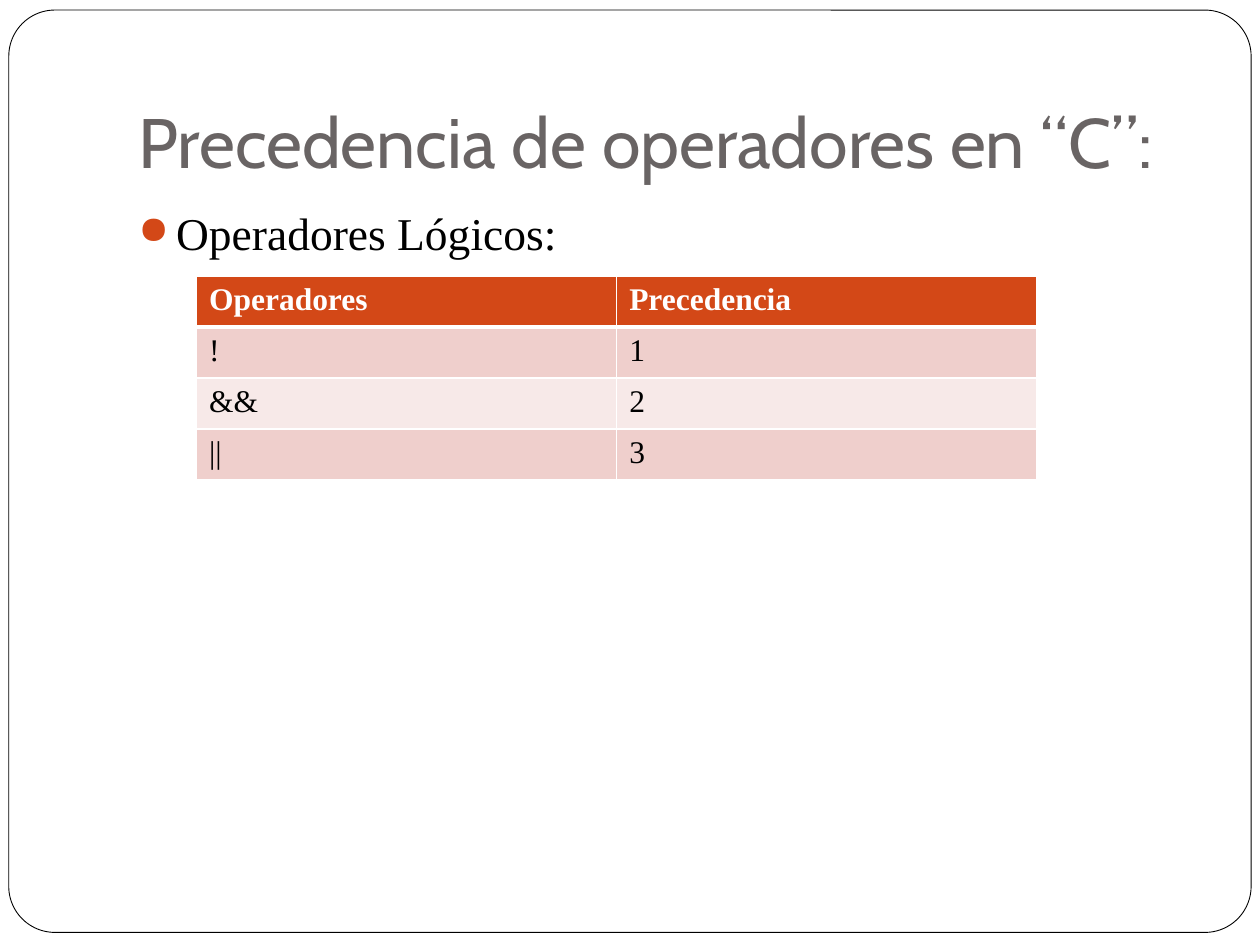
import pptx
import pptx.util
import pptx.dml.color
import pptx.enum.shapes
import pptx.enum.text
import pptx.oxml
import pptx.oxml.ns

Inches = pptx.util.Inches
Pt = pptx.util.Pt

TITLE = "Precedencia de operadores en “C”:"
POINT = "Operadores Lógicos:"
ROWS = [
    ("Operadores", "Precedencia"),
    ("!", "1"),
    ("&&", "2"),
    ("||", "3"),
]
FILLS = ["D34817", "EFCFCC", "F7E9E8", "EFCFCC"]
SERIF = "Times New Roman"
HEAD = {"name": "Cabin", "size": Pt(40), "color": "696464"}
BODY = {"name": SERIF, "size": Pt(26), "color": "000000"}
TOP = {"name": SERIF, "size": Pt(18), "bold": True, "color": "FFFFFF"}
CELL = {"name": SERIF, "size": Pt(18), "bold": False, "color": "000000"}


def paint(part, color):
    part.rgb = pptx.dml.color.RGBColor.from_string(color)


def fill(part, color):
    part.fill.solid()
    paint(part.fill.fore_color, color)


def write(para, text, style):
    run = para.add_run()
    run.text = text
    for key, value in style.items():
        if key == "color":
            paint(run.font.color, value)
        else:
            setattr(run.font, key, value)


def node(tag, attrs="", inner=""):
    space = pptx.oxml.ns.nsdecls("a")
    return pptx.oxml.parse_xml(f"<a:{tag} {space} {attrs}>{inner}</a:{tag}>")


def add_text(slide, box, text, style, frame):
    area = slide.shapes.add_textbox(*map(Inches, box)).text_frame
    for key, value in frame.items():
        setattr(area, key, value)
    para = area.paragraphs[0]
    write(para, text, style)
    return para


def add_dot(para):
    para.space_before = Pt(5.8)
    props = para._p.get_or_add_pPr()
    props.set("marL", str(Inches(0.3)))
    props.set("indent", str(-Inches(0.3)))
    props.append(node("buClr", "", '<a:srgbClr val="D34817"/>'))
    props.append(node("buSzPct", 'val="85000"'))
    props.append(node("buChar", 'char="●"'))


def add_edges(cell, first, second):
    props = cell._tc.get_or_add_tcPr()
    ink = '<a:solidFill><a:srgbClr val="FFFFFF"/></a:solidFill>'
    sides = {"lnL": 1, "lnR": 1, "lnT": 3 if second else 1, "lnB": 3 if first else 1}
    for spot, (tag, width) in enumerate(sides.items()):
        props.insert(spot, node(tag, f'w="{Pt(width)}"', ink))


def add_grid(slide):
    size = len(ROWS), len(ROWS[0])
    box = map(Inches, (1.56, 2.19, 6.67, 1.62))
    table = slide.shapes.add_table(*size, *box).table
    for r, row in enumerate(ROWS):
        for c, text in enumerate(row):
            cell = table.cell(r, c)
            write(cell.text_frame.paragraphs[0], text, CELL if r else TOP)
            fill(cell, FILLS[r])
            add_edges(cell, r == 0, r == 1)


def main():
    deck = pptx.Presentation()
    deck.slide_width, deck.slide_height = Inches(10), Inches(7.5)
    slide = deck.slides.add_slide(deck.slide_layouts[6])
    kind = pptx.enum.shapes.MSO_SHAPE.ROUNDED_RECTANGLE
    frame = slide.shapes.add_shape(kind, *map(Inches, (0.07, 0.08, 9.86, 7.32)))
    frame.adjustments[0] = 0.05
    frame.shadow.inherit = False
    fill(frame, "FFFFFF")
    paint(frame.line.color, "000000")
    frame.line.width = Pt(0.5)

    anchor = pptx.enum.text.MSO_ANCHOR
    low = {"word_wrap": True, "vertical_anchor": anchor.BOTTOM, "margin_bottom": Inches(0.1)}
    high = {"word_wrap": True, "vertical_anchor": anchor.TOP}
    add_text(slide, (1, 0.3, 8.5, 1.25), TITLE, HEAD, low)
    add_dot(add_text(slide, (1, 1.58, 8.5, 5), POINT, BODY, high))
    add_grid(slide)
    deck.save("out.pptx")


if __name__ == "__main__":
    main()
